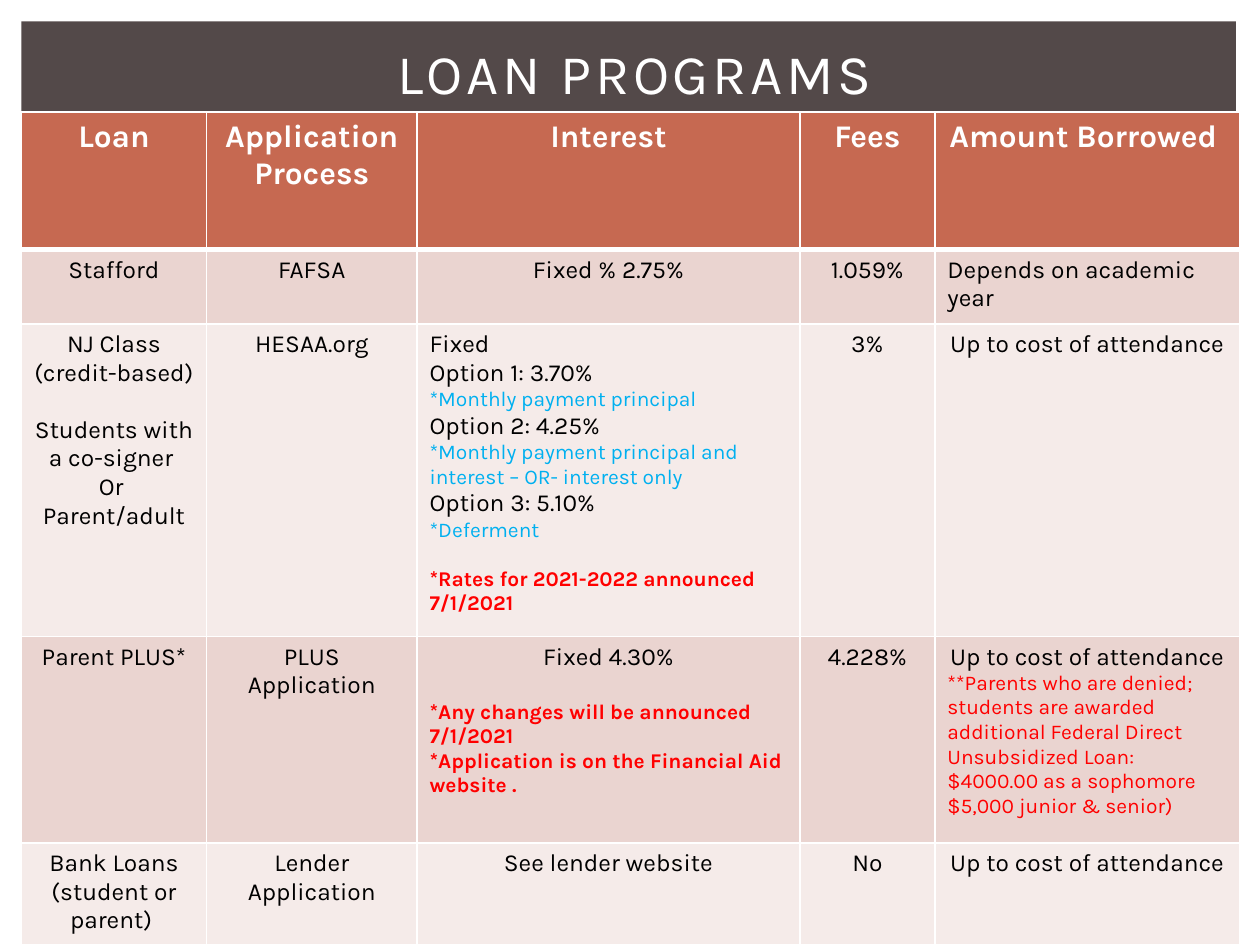
import dataclasses

import lxml.etree
import pptx
import pptx.dml.color
import pptx.enum.shapes
import pptx.enum.text
import pptx.oxml.ns
import pptx.util

Inches = pptx.util.Inches
Pt = pptx.util.Pt
RGBColor = pptx.dml.color.RGBColor
Align = pptx.enum.text.PP_ALIGN
qn = pptx.oxml.ns.qn

FONT = "Karla"
WHITE = RGBColor(0xFF, 0xFF, 0xFF)
BLACK = RGBColor(0x00, 0x00, 0x00)
BLUE = RGBColor(0x00, 0xB0, 0xF0)
RED = RGBColor(0xFF, 0x00, 0x00)
BANNER = RGBColor(0x53, 0x49, 0x49)
HEADER = RGBColor(0xC6, 0x69, 0x51)
BANDS = (RGBColor(0xEA, 0xD4, 0xD0), RGBColor(0xF5, 0xEB, 0xE9))

COLUMN_WIDTHS = (1.47, 1.67, 3.04, 1.07, 2.42)
ROW_HEIGHTS = (1.09, 0.59, 2.48, 1.64, 0.81)


@dataclasses.dataclass(frozen=True)
class Line:
    text: str
    size: int = 14
    color: RGBColor = BLACK
    bold: bool = False
    align: Align = Align.CENTER
    space_before: float = 0


def header(text: str) -> Line:
    return Line(text, size=18, color=WHITE, bold=True)


def left(text: str) -> Line:
    return Line(text, align=Align.LEFT)


def note(text: str, color: RGBColor, bold: bool = False, space_before: float = 0) -> Line:
    return Line(text, 12, color, bold, Align.LEFT, space_before)


COST_OF_ATTENDANCE = Line("Up to cost of attendance ")

ROWS = (
    [[header(text)] for text in
     ("Loan", "Application Process", "Interest", "Fees", "Amount Borrowed ")],
    [
        [Line("Stafford")],
        [Line("FAFSA")],
        [Line("Fixed % 2.75%")],
        [Line("1.059%")],
        [left("Depends on academic year")],
    ],
    [
        [
            Line("NJ Class"),
            Line("(credit-based)"),
            Line("Students with a co-signer ", space_before=16.4),
            Line("Or "),
            Line("Parent/adult"),
        ],
        [Line("HESAA.org")],
        [
            left("Fixed"),
            left("Option 1: 3.70%"),
            note("*Monthly payment principal", BLUE),
            left("Option 2: 4.25%"),
            note("*Monthly payment principal and interest – OR- interest only", BLUE),
            left("Option 3: 5.10%"),
            note("*Deferment", BLUE),
            note("*Rates for 2021-2022 announced 7/1/2021", RED, True, 14),
        ],
        [Line("3%")],
        [COST_OF_ATTENDANCE],
    ],
    [
        [Line("Parent PLUS*")],
        [Line("PLUS Application")],
        [
            Line("Fixed 4.30%"),
            note("*Any changes will be announced 7/1/2021", RED, True, 16.4),
            note("*Application is on the Financial Aid website .", RED, True),
        ],
        [Line("4.228%")],
        [
            COST_OF_ATTENDANCE,
            note("**Parents who are denied; students are awarded additional "
                 "Federal Direct Unsubsidized Loan:", RED),
            note("$4000.00 as a sophomore $5,000 junior & senior)", RED),
        ],
    ],
    [
        [Line("Bank Loans (student or parent) ")],
        [Line("Lender Application")],
        [Line("See lender website")],
        [Line("No")],
        [COST_OF_ATTENDANCE],
    ],
)


def write_lines(text_frame, lines: list[Line]) -> None:
    for index, line in enumerate(lines):
        paragraph = text_frame.paragraphs[0] if index == 0 else text_frame.add_paragraph()
        paragraph.text = line.text
        paragraph.alignment = line.align
        paragraph.space_before = Pt(line.space_before)
        paragraph.font.name = FONT
        paragraph.font.size = Pt(line.size)
        paragraph.font.bold = line.bold
        paragraph.font.color.rgb = line.color


def set_borders(cell, top: float, bottom: float) -> None:
    """Give a cell white borders; call before setting its fill."""
    properties = cell._tc.get_or_add_tcPr()
    for side, width in (("L", 1), ("R", 1), ("T", top), ("B", bottom)):
        border = lxml.etree.SubElement(properties, qn(f"a:ln{side}"), w=str(Pt(width)))
        fill = lxml.etree.SubElement(border, qn("a:solidFill"))
        lxml.etree.SubElement(fill, qn("a:srgbClr"), val=str(WHITE))


def add_banner(slide) -> None:
    banner = slide.shapes.add_shape(
        pptx.enum.shapes.MSO_SHAPE.RECTANGLE,
        Inches(0.17), Inches(0.17), Inches(9.64), Inches(1.47))
    banner.shadow.inherit = False
    banner.fill.solid()
    banner.fill.fore_color.rgb = BANNER
    banner.line.fill.background()


def add_title(slide) -> None:
    title = slide.shapes.add_textbox(Inches(0.45), 0, Inches(9.17), Inches(1.15))
    title.text_frame.word_wrap = True
    title.text_frame.vertical_anchor = pptx.enum.text.MSO_ANCHOR.MIDDLE
    write_lines(title.text_frame, [Line("LOAN PROGRAMS", size=32, color=WHITE)])
    run = title.text_frame.paragraphs[0].runs[0]
    run._r.get_or_add_rPr().set("spc", "200")


def add_loan_table(slide) -> None:
    table = slide.shapes.add_table(
        len(ROW_HEIGHTS), len(COLUMN_WIDTHS), Inches(0.17), Inches(0.89),
        Inches(sum(COLUMN_WIDTHS)), Inches(sum(ROW_HEIGHTS))).table
    table.horz_banding = False
    for column, width in zip(table.columns, COLUMN_WIDTHS):
        column.width = Inches(width)
    for row_index, (row, height) in enumerate(zip(table.rows, ROW_HEIGHTS)):
        row.height = Inches(height)
        color = HEADER if row_index == 0 else BANDS[(row_index - 1) % 2]
        for cell, lines in zip(row.cells, ROWS[row_index]):
            set_borders(cell, top=3 if row_index == 1 else 1,
                        bottom=3 if row_index == 0 else 1)
            cell.fill.solid()
            cell.fill.fore_color.rgb = color
            write_lines(cell.text_frame, lines)


def main() -> None:
    presentation = pptx.Presentation()
    presentation.slide_width = Inches(10)
    presentation.slide_height = Inches(7.5)
    slide = presentation.slides.add_slide(presentation.slide_layouts[6])
    add_banner(slide)
    add_loan_table(slide)
    add_title(slide)
    presentation.save("out.pptx")


if __name__ == "__main__":
    main()
